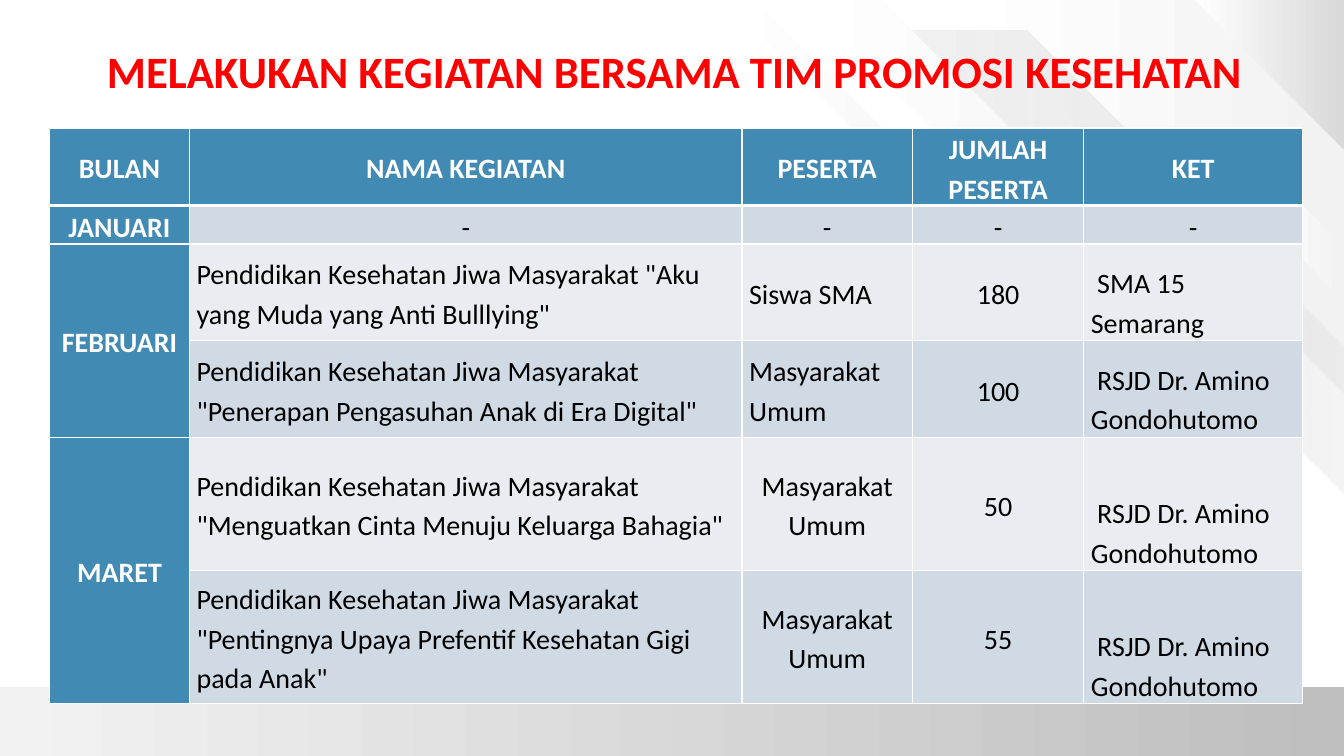
from dataclasses import dataclass

from lxml.etree import SubElement
from pptx import Presentation
from pptx.dml.color import RGBColor
from pptx.enum.shapes import MSO_SHAPE
from pptx.enum.text import MSO_ANCHOR, MSO_AUTO_SIZE, PP_ALIGN
from pptx.oxml import parse_xml
from pptx.oxml.ns import nsdecls, qn
from pptx.util import Inches, Pt

FONT = "Calibri"
BLUE, DARK, PALE = "418AB3", "CFDAE5", "E9EDF2"
WHITE, BLACK, RED = "FFFFFF", "000000", "FF0000"
LEFT, MID = PP_ALIGN.LEFT, PP_ALIGN.CENTER


@dataclass
class Band:
    points: list[tuple[float, float]]
    start: str
    end: str
    alpha: int = 100  # opacity of the end colour, percent


@dataclass
class Event:
    month: str  # empty where the month above continues
    name: str
    group: str
    count: str
    note: str
    height: float
    side: PP_ALIGN = MID  # alignment of the group


BANDS = [
    Band([(13.33, 0), (9.43, 0), (13.33, 3.9)], WHITE, "F2F2F2"),
    Band([(13.33, 3.44), (10.19, 0.3), (8.71, 0.3), (13.33, 4.91)],
         "F2F2F2", "D9D9D9", 26),
    Band([(13.33, 2.45), (12.49, 1.61), (12.49, 2.14), (13.33, 2.98)],
         WHITE, "F2F2F2"),
    Band([(11.57, 2.82), (8.74, 0), (7.97, 0), (10.8, 2.82)], WHITE, "F2F2F2"),
    Band([(13.33, 0), (11.85, 0), (13.33, 1.48)], WHITE, "D9D9D9"),
    Band([(7.48, 0), (10.01, 2.53), (10.01, 2.82), (7.18, 0)], WHITE, "F2F2F2"),
]

HEADS = ["BULAN", "NAMA KEGIATAN", "PESERTA", "JUMLAH PESERTA", "KET"]
WIDTHS = [1.39, 5.48, 1.69, 1.7, 2.17]
TOPIC = "Pendidikan Kesehatan Jiwa Masyarakat "
PUBLIC = "Masyarakat Umum"
CLINIC = " RSJD Dr. Amino Gondohutomo"
EVENTS = [
    Event("JANUARI", "-", "-", "-", "-", 0.36),
    Event("FEBRUARI", TOPIC + '"Aku yang Muda yang Anti Bulllying"',
          "Siswa SMA", "180", " SMA 15 Semarang", 0.96, LEFT),
    Event("", TOPIC + '"Penerapan Pengasuhan Anak di Era Digital"',
          PUBLIC, "100", CLINIC, 0.96, LEFT),
    Event("MARET", TOPIC + '"Menguatkan Cinta Menuju Keluarga Bahagia"',
          PUBLIC, "50", CLINIC, 1.32),
    Event("", TOPIC + '"Pentingnya Upaya Prefentif Kesehatan Gigi pada Anak"',
          PUBLIC, "55", CLINIC, 1.32),
]


def color(code: str) -> RGBColor:
    return RGBColor.from_string(code)


def shade(shape, start: str, end: str, angle: int = 0, alpha: int = 100) -> None:
    """Fill a shape with a two-colour gradient and no outline."""
    shape.shadow.inherit = False
    shape.line.fill.background()
    shape.fill.gradient()
    shape.fill.gradient_angle = angle
    for stop, code in zip(shape.fill.gradient_stops, (start, end)):
        stop.color.rgb = color(code)
    if alpha < 100:
        last = list(shape.element.iter(qn("a:srgbClr")))[-1]
        SubElement(last, qn("a:alpha")).set("val", str(alpha * 1000))


def draw_band(slide, band: Band) -> None:
    first, *rest = [(Inches(x), Inches(y)) for x, y in band.points]
    path = slide.shapes.build_freeform(*first)
    path.add_line_segments(rest, close=True)
    shade(path.convert_to_shape(), band.start, band.end, alpha=band.alpha)


def style(par, size: int, code: str, bold: bool) -> None:
    font = par.font
    font.name, font.size, font.bold = FONT, Pt(size), bold
    font.color.rgb = color(code)


def edge(cell, top: int, low: int) -> None:
    """Draw white borders; top and low are widths in points."""
    props = cell._tc.get_or_add_tcPr()
    sides = [("L", 1), ("R", 1), ("T", top), ("B", low)]
    for i, (side, width) in enumerate(sides):
        props.insert(i, parse_xml(
            f'<a:ln{side} {nsdecls("a")} w="{Pt(width)}"><a:solidFill>'
            f'<a:srgbClr val="{WHITE}"/></a:solidFill></a:ln{side}>'))


def write(cell, text: str, fill: str, side: PP_ALIGN, head: bool) -> None:
    cell.fill.solid()
    cell.fill.fore_color.rgb = color(fill)
    cell.margin_left = cell.margin_right = Inches(0.07)
    cell.margin_top = cell.margin_bottom = 0
    cell.vertical_anchor = MSO_ANCHOR.MIDDLE
    par = cell.text_frame.paragraphs[0]
    par.text = text
    par.alignment, par.line_spacing = side, 1.15
    style(par, 20, WHITE if head else BLACK, head)


def draw_table(slide) -> None:
    frame = slide.shapes.add_table(len(EVENTS) + 1, len(HEADS), Inches(0.49),
                                   Inches(1.27), Inches(12.44), Inches(5.69))
    table = frame.table
    table.horz_banding = False
    for col, width in zip(table.columns, WIDTHS):
        col.width = Inches(width)

    # Header row
    table.rows[0].height = Inches(0.48)
    for c, text in enumerate(HEADS):
        write(table.cell(0, c), text, BLUE, MID, True)
        edge(table.cell(0, c), 1, 3)

    # Events
    for r, event in enumerate(EVENTS, 1):
        table.rows[r].height = Inches(event.height)
        empty = event.name == "-"
        wide = MID if empty else LEFT
        texts = [event.month, event.name, event.group, event.count, event.note]
        sides = [MID, wide, event.side, MID, wide]
        for c, (text, side) in enumerate(zip(texts, sides)):
            cell = table.cell(r, c)
            fill = BLUE if c == 0 else DARK if r % 2 else PALE
            write(cell, text, fill, side, c == 0)
            edge(cell, 3 if r == 1 else 1, 1)
        if not empty:
            cell.vertical_anchor = MSO_ANCHOR.BOTTOM
            cell.text_frame.paragraphs[0].space_after = Pt(10)
        if not event.month:
            table.cell(r - 1, 0).merge(table.cell(r, 0))


def main() -> None:
    deck = Presentation()
    deck.slide_width, deck.slide_height = Inches(13.33), Inches(7.5)
    slide = deck.slides.add_slide(deck.slide_layouts[6])

    # Backdrop
    floor = slide.shapes.add_shape(MSO_SHAPE.RECTANGLE, 0, Inches(6.82),
                                   Inches(13.33), Inches(0.68))
    shade(floor, "BFBEBE", "F2F2F2", 180)
    for band in BANDS:
        draw_band(slide, band)

    # Title
    box = slide.shapes.add_textbox(Inches(0.56), Inches(0.38),
                                   Inches(12.61), Inches(0.64))
    frame = box.text_frame
    frame.word_wrap = True
    frame.auto_size = MSO_AUTO_SIZE.SHAPE_TO_FIT_TEXT
    frame.margin_left = Inches(0.5)
    title = frame.paragraphs[0]
    title.text = "MELAKUKAN KEGIATAN BERSAMA TIM PROMOSI KESEHATAN"
    style(title, 32, RED, True)

    draw_table(slide)
    deck.save("out.pptx")


if __name__ == "__main__":
    main()
